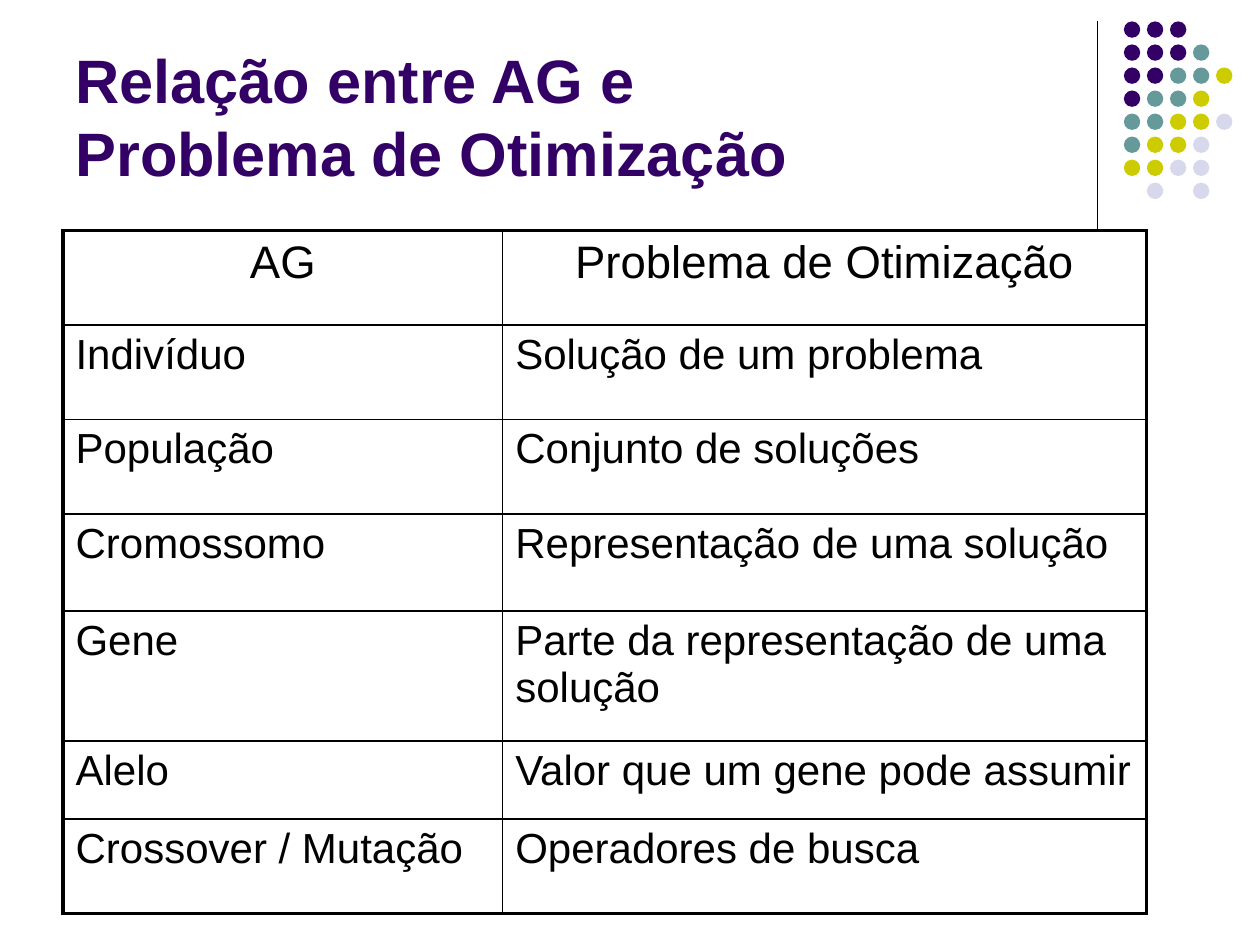
from lxml.etree import SubElement
from pptx import Presentation
from pptx.dml.color import RGBColor
from pptx.enum.shapes import MSO_CONNECTOR as Connector, MSO_SHAPE as Shape
from pptx.enum.text import MSO_ANCHOR as Anchor, PP_ALIGN as Align
from pptx.oxml.ns import qn
from pptx.util import Inches, Pt

FONT, BLACK, PURPLE = "Arial", "000000", "330066"


def color(hex_text):
    return RGBColor.from_string(hex_text)


def add_border(cell, side, points):
    line = SubElement(cell._tc.get_or_add_tcPr(), qn(f"a:ln{side}"), w=str(Pt(points)))
    fill = SubElement(line, qn("a:solidFill"))
    SubElement(fill, qn("a:srgbClr"), val=BLACK)


deck = Presentation()
deck.slide_width, deck.slide_height = Inches(10), Inches(7.5)
page = deck.slides.add_slide(deck.slide_layouts[6])

# Vertical rule beside the dots
rule = page.shapes.add_connector(
    Connector.STRAIGHT, Inches(8.71), Inches(0.17), Inches(8.71), Inches(1.83))
rule.line.color.rgb = color(BLACK)
rule.line.width = Pt(0.75)
SubElement(rule._element.spPr, qn("a:effectLst"))

# Dot pattern: one letter per dot, a space where there is none
dot_colors = {"P": PURPLE, "T": "669999", "Y": "CCCC00", "L": "D8D8EC"}
dot_rows = ["PPP", "PPPT", "PPTTY", "PTTY", "TTYYL", "TYYL", "YYLL", " L L"]
dot_size, dot_pitch = Inches(0.13), Inches(1.28 / 7)
dots = page.shapes.add_group_shape()
for row, letters in enumerate(dot_rows):
    for column, letter in enumerate(letters):
        if letter == " ":
            continue
        dot = dots.shapes.add_shape(
            Shape.OVAL, Inches(8.92) + column * dot_pitch,
            Inches(0.17) + row * dot_pitch, dot_size, dot_size)
        dot.shadow.inherit = False
        dot.fill.solid()
        dot.fill.fore_color.rgb = color(dot_colors[letter])
        dot.line.fill.background()

# Title
title = page.shapes.add_textbox(Inches(0.5), Inches(0.13), Inches(8.25), Inches(1.42))
frame = title.text_frame
frame.word_wrap = True
frame.vertical_anchor = Anchor.BOTTOM
para = frame.paragraphs[0]
para.text = "Relação entre AG e\vProblema de Otimização"
para.font.name, para.font.size, para.font.bold = FONT, Pt(35), True
para.font.color.rgb = color(PURPLE)

# Table of matching terms
terms = [
    ("AG", "Problema de Otimização"),
    ("Indivíduo", "Solução de um problema"),
    ("População", "Conjunto de soluções"),
    ("Cromossomo", "Representação de uma solução"),
    ("Gene", "Parte da representação de uma solução"),
    ("Alelo", "Valor que um gene pode assumir"),
    ("Crossover / Mutação", "Operadores de busca"),
]
column_widths = [3.49, 5.11]
row_heights = [0.75, 0.75, 0.75, 0.77, 1.03, 0.62, 0.75]
table = page.shapes.add_table(
    len(terms), 2, Inches(0.5), Inches(1.83),
    Inches(sum(column_widths)), Inches(sum(row_heights))).table
table.first_row = table.horz_banding = False
for column, width in zip(table.columns, column_widths):
    column.width = Inches(width)

last = len(terms) - 1
for row, (pair, height) in enumerate(zip(terms, row_heights)):
    table.rows[row].height = Inches(height)
    for column, text in enumerate(pair):
        cell = table.cell(row, column)
        # Thick outer frame, thin inner lines
        outer_sides = {"L": column == 0, "R": column == 1, "T": row == 0, "B": row == last}
        for side, is_outer in outer_sides.items():
            add_border(cell, side, 2.25 if is_outer else 1)
        cell.fill.background()
        cell.vertical_anchor = Anchor.TOP
        para = cell.text_frame.paragraphs[0]
        para.text = text
        para.alignment = Align.CENTER if row == 0 else Align.LEFT
        para.font.name, para.font.size = FONT, Pt(26 if row == 0 else 24)
        para.font.color.rgb = color(BLACK)

deck.save("out.pptx")
